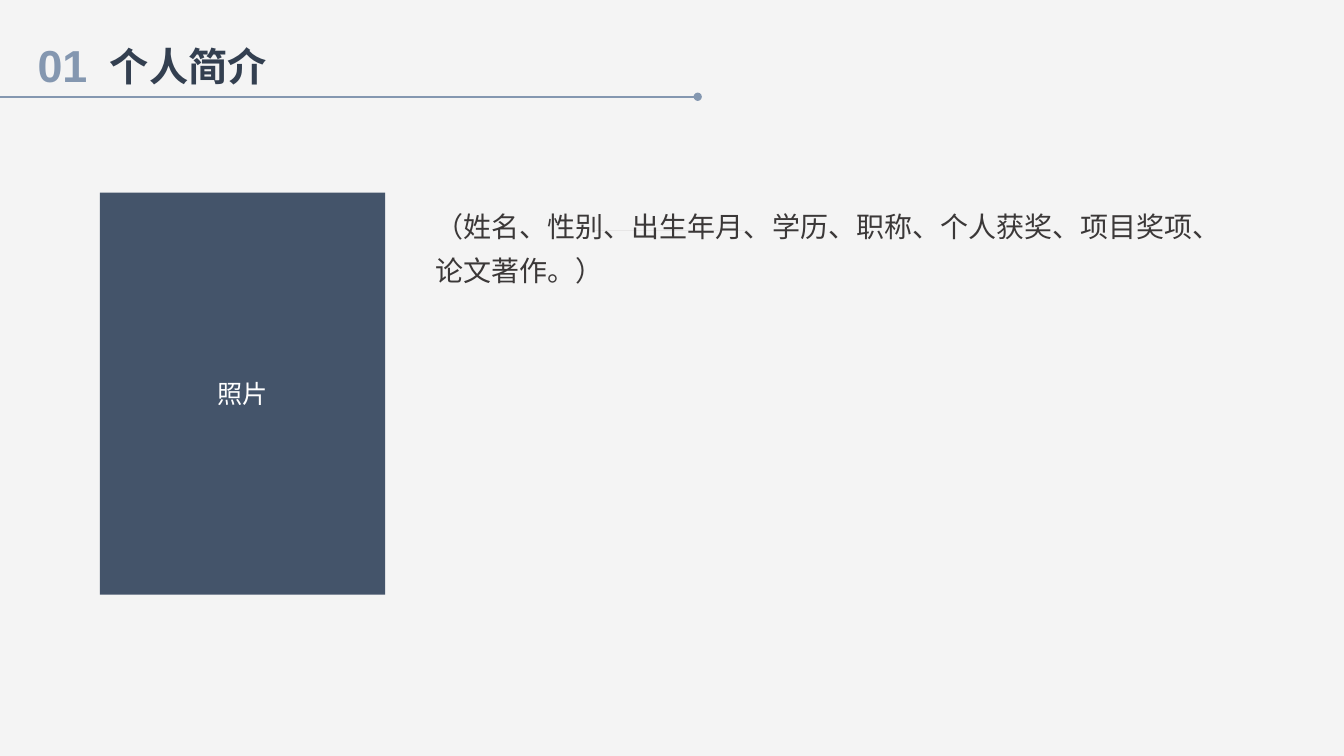
from lxml import etree
from pptx import Presentation
from pptx.dml.color import RGBColor
from pptx.enum import shapes, text
from pptx.oxml.ns import qn
from pptx.util import Inches, Pt

BACKGROUND = RGBColor(0xF4, 0xF4, 0xF4)
PALE_GREY = RGBColor(0xE7, 0xE6, 0xE6)
SLATE = RGBColor(0x44, 0x54, 0x6A)
BLUE_GREY = RGBColor(0x84, 0x97, 0xB0)
NAVY = RGBColor(0x33, 0x3F, 0x50)
CHARCOAL = RGBColor(0x3B, 0x38, 0x38)
WHITE = RGBColor(0xFF, 0xFF, 0xFF)
CJK_FONT = "Noto Sans CJK SC"


def add_span(para, words, size, font, color, bold=False):
    """Add a run whose font applies to Latin and East Asian text alike."""
    span = para.add_run()
    span.text = words
    span.font.size = Pt(size)
    span.font.name = font
    span.font.bold = bold
    span.font.color.rgb = color
    east_asian = etree.SubElement(span.font._element, qn("a:ea"))
    east_asian.set("typeface", font)


def add_rule(page, start, end, y, color, width):
    rule = page.shapes.add_connector(
        shapes.MSO_CONNECTOR.STRAIGHT, Inches(start), Inches(y), Inches(end), Inches(y))
    rule.line.color.rgb = color
    rule.line.width = Pt(width)
    etree.SubElement(rule._element.spPr, qn("a:effectLst"))
    return rule


deck = Presentation()
deck.slide_width, deck.slide_height = Inches(13.33), Inches(7.5)
page = deck.slides.add_slide(deck.slide_layouts[5])
page.background.fill.solid()
page.background.fill.fore_color.rgb = BACKGROUND

# Heading
title = page.shapes.title
title.left, title.top = Inches(0.99), Inches(0.37)
title.width, title.height = Inches(4.25), Inches(0.57)
title.text_frame.vertical_anchor = text.MSO_ANCHOR.TOP
title.text_frame.auto_size = text.MSO_AUTO_SIZE.NONE
para = title.text_frame.paragraphs[0]
para.alignment = text.PP_ALIGN.LEFT
para.space_before = Pt(0)
add_span(para, "个人简介", 28, CJK_FONT, NAVY, bold=True)

number = page.shapes.add_textbox(Inches(0.37), Inches(0.37), Inches(0.5), Inches(0.54))
frame = number.text_frame
frame.margin_left = frame.margin_right = frame.margin_top = frame.margin_bottom = 0
frame.vertical_anchor = text.MSO_ANCHOR.MIDDLE
frame.word_wrap = False
para = frame.paragraphs[0]
para.alignment = text.PP_ALIGN.CENTER
add_span(para, "01", 32, "Arial", BLUE_GREY, bold=True)

heading_rule = add_rule(page, 6.92, 0, 0.96, BLUE_GREY, 1.5)
etree.SubElement(heading_rule.line._get_or_add_ln(), qn("a:headEnd")).set("type", "oval")

# Profile
add_rule(page, 5.89, 7.42, 2.29, PALE_GREY, 0.5)

photo = page.shapes.add_shape(
    shapes.MSO_SHAPE.RECTANGLE, Inches(0.99), Inches(1.91), Inches(2.83), Inches(3.99))
photo.shadow.inherit = False
photo.fill.solid()
photo.fill.fore_color.rgb = SLATE
photo.line.fill.background()
photo.text_frame.vertical_anchor = text.MSO_ANCHOR.MIDDLE
para = photo.text_frame.paragraphs[0]
para.alignment = text.PP_ALIGN.CENTER
add_span(para, "照片", 18, "Calibri", WHITE)

profile = page.shapes.add_textbox(Inches(4.22), Inches(1.93), Inches(8.15), Inches(3.61))
profile.text_frame.word_wrap = True
para = profile.text_frame.paragraphs[0]
para.line_spacing = 1.3
add_span(para, "（姓名、性别、出生年月、学历、职称、个人获奖、项目奖项、论文著作。）",
         20, CJK_FONT, CHARCOAL)

deck.save("out.pptx")
